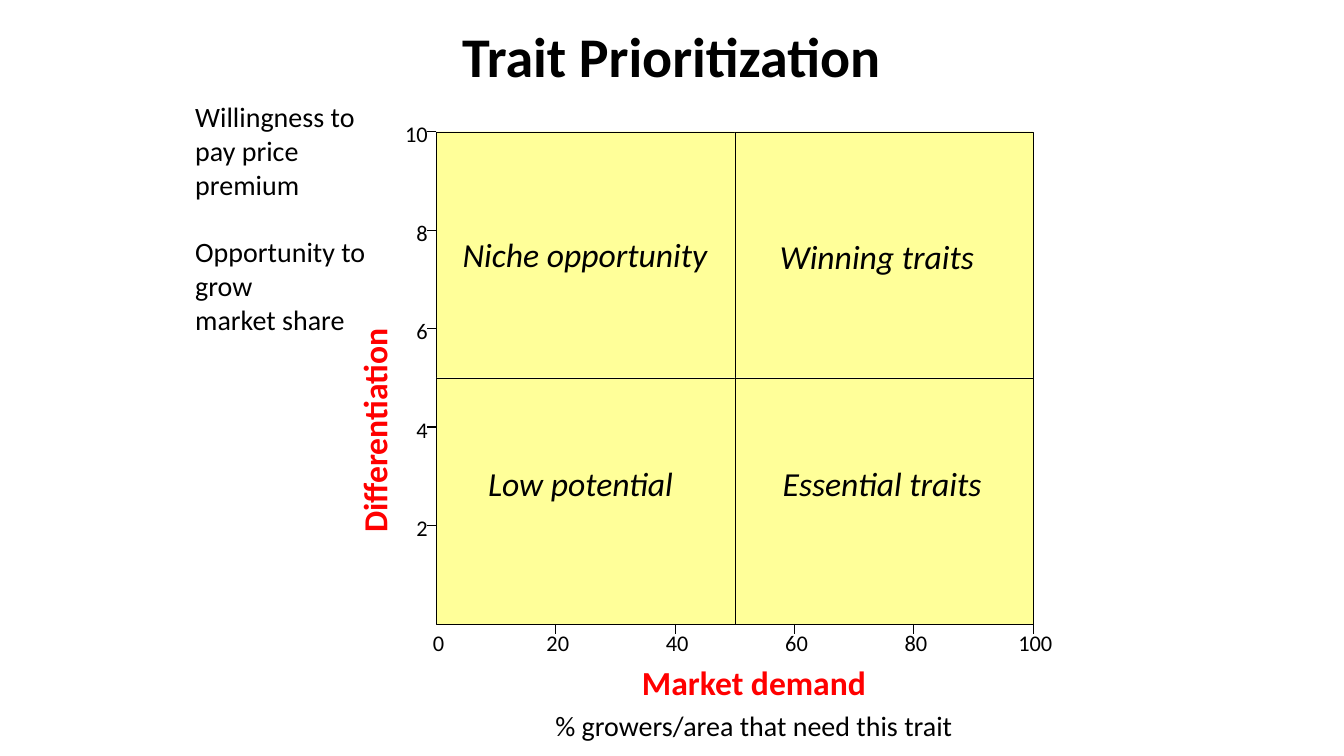
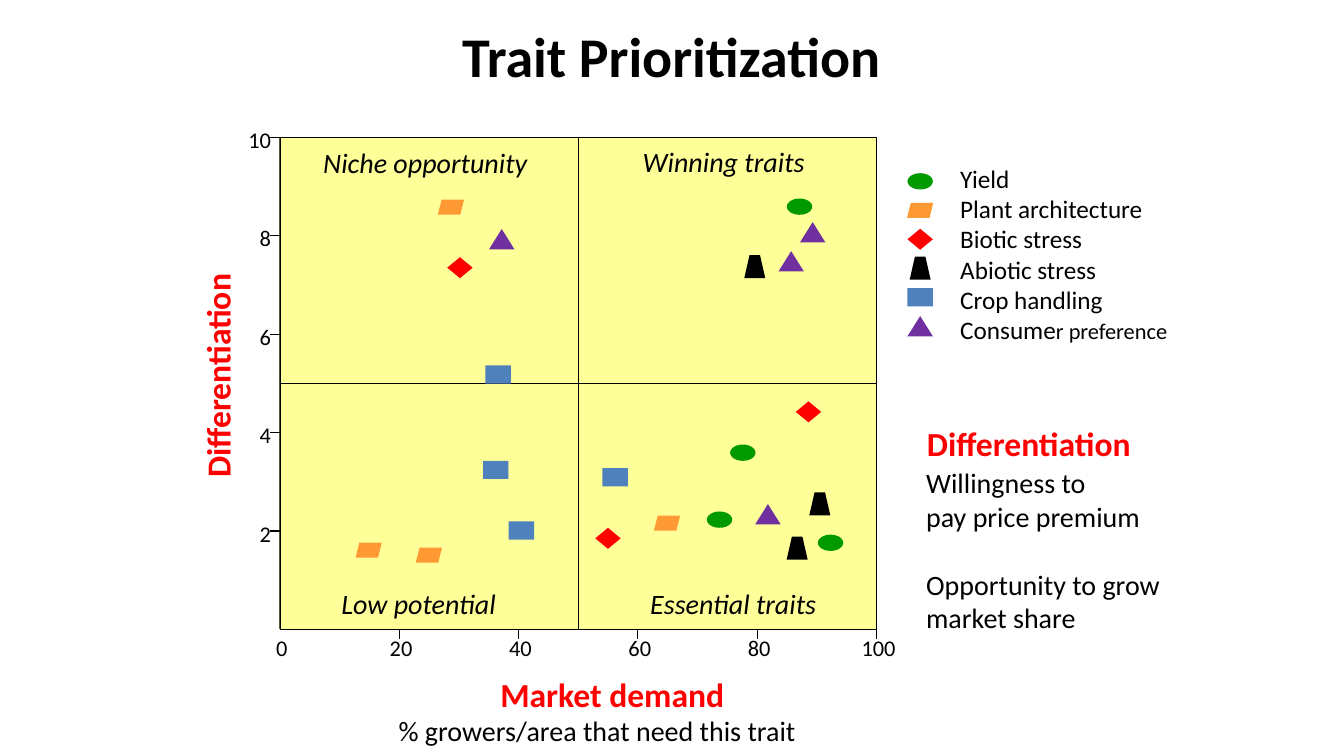
from itertools import product

from lxml import etree
from pptx import Presentation
from pptx.dml.color import RGBColor as RGB
from pptx.enum.shapes import MSO_CONNECTOR as LINK, MSO_SHAPE as SHAPE
from pptx.enum.text import MSO_ANCHOR as ANCHOR, PP_ALIGN as ALIGN
from pptx.oxml.ns import qn
from pptx.util import Cm, Pt

FONT = "Calibri"
HUES = {
    "ink": "000000", "red": "FF0000", "pale": "FFFF99", "green": "009900",
    "orange": "FF9933", "blue": "4F81BD", "violet": "7030A0",
}
WIDE, HIGH = 15.04, 12.4
TICK = 0.25
AREAS = ["Niche opportunity", "Winning traits", "Low potential", "Essential traits"]
TRAITS = [
    ("Yield", SHAPE.FLOWCHART_CONNECTOR, "green", 0.64, 0.41,
     [(87.1, 8.59), (92.3, 1.76), (77.6, 3.59), (73.7, 2.23)]),
    ("Plant architecture", SHAPE.PARALLELOGRAM, "orange", 0.66, 0.38,
     [(28.7, 8.58), (25, 1.51), (64.9, 2.16), (14.9, 1.61)]),
    ("Biotic stress", SHAPE.DIAMOND, "red", 0.64, 0.53,
     [(55, 1.85), (88.6, 4.42), (30.2, 7.35)]),
    ("Abiotic stress", SHAPE.TRAPEZOID, "ink", 0.53, 0.58,
     [(79.6, 7.37), (86.7, 1.65), (90.5, 2.55)]),
    ("Crop handling", SHAPE.RECTANGLE, "blue", 0.64, 0.46,
     [(56.2, 3.09), (36.2, 3.24), (40.5, 2.01), (36.6, 5.18)]),
    ("Consumer preference", SHAPE.ISOSCELES_TRIANGLE, "violet", 0.64, 0.51,
     [(89.3, 8.07), (37.2, 7.93), (81.8, 2.34), (85.7, 7.48)]),
]


def hue(name):
    """Return the named colour."""
    return RGB.from_string(HUES[name])


def style(para, size, tint="ink", bold=False, slant=False, align=ALIGN.LEFT):
    """Set the font and alignment of a paragraph."""
    font = para.font
    font.name, font.size, font.bold, font.italic = FONT, Pt(size), bold, slant
    font.color.rgb = hue(tint)
    para.alignment = align


def text(slide, x, y, w, h, lines, size, **look):
    """Add a text box with one paragraph for each line."""
    box = slide.shapes.add_textbox(Cm(x), Cm(y), Cm(w), Cm(h))
    frame = box.text_frame
    frame.word_wrap = True
    for i, line in enumerate(lines):
        para = frame.add_paragraph() if i else frame.paragraphs[0]
        para.text = line
        style(para, size, **look)
    return box


def label(slide, x, y, words, size, w=8, **look):
    """Add one line of text centred on a point."""
    h = 0.25 + size * 0.043
    return text(slide, x - w / 2, y - h / 2, w, h, [words], size,
                align=ALIGN.CENTER, **look)


def rule(slide, x1, y1, x2, y2):
    """Draw a thin black line."""
    line = slide.shapes.add_connector(LINK.STRAIGHT, Cm(x1), Cm(y1), Cm(x2), Cm(y2))
    line.line.color.rgb = hue("ink")
    line.line.width = Pt(0.75)
    etree.SubElement(line._element.spPr, qn("a:effectLst"))


def block(slide, kind, x, y, w, h, tint, edge=0):
    """Add a filled shape, with a black edge if asked."""
    shape = slide.shapes.add_shape(kind, Cm(x), Cm(y), Cm(w), Cm(h))
    shape.shadow.inherit = False
    shape.fill.solid()
    shape.fill.fore_color.rgb = hue(tint)
    if edge:
        shape.line.color.rgb = hue("ink")
        shape.line.width = Pt(edge)
    else:
        shape.line.fill.background()


def page(deck):
    """Add a slide with the shared title."""
    slide = deck.slides.add_slide(deck.slide_layouts[5])
    title = slide.shapes.title
    title.left, title.top, title.width, title.height = Cm(7.24), Cm(0.69), Cm(19.35), Cm(1.42)
    title.text_frame.text = "Trait Prioritization"
    title.text_frame.vertical_anchor = ANCHOR.MIDDLE
    style(title.text_frame.paragraphs[0], 40, bold=True, align=ALIGN.CENTER)
    return slide


def grid(slide, x, y, size, spots, side, name):
    """Draw the four areas with their axes, scales and names."""
    base = y + HIGH
    rule(slide, x, base, x + WIDE, base)
    rule(slide, x, base, x, y)
    for row, col in product(range(2), repeat=2):
        block(slide, SHAPE.RECTANGLE, x + col * WIDE / 2, y + row * HIGH / 2,
              WIDE / 2, HIGH / 2, "pale", 0.25)
    for i in range(6):
        across, up = x + i * WIDE / 5, base - i * HIGH / 5
        label(slide, across + 0.05, base + 0.47, str(i * 20), 16, w=1.6)
        if i:
            rule(slide, across, base, across, base + TICK)
            rule(slide, x, up, x - TICK, up)
            text(slide, x - 1.47, up - 0.41, 1.5, 0.94, [str(i * 2)], 16,
                 align=ALIGN.RIGHT)
    for words, (across, down) in zip(AREAS, spots):
        label(slide, x + across, y + down, words, size, slant=True)
    axis = label(slide, x - 1.57, y + side, "Differentiation", 24, tint="red", bold=True)
    axis.rotation = 270
    label(slide, x + name[0], y + name[1], "Market demand", 24, tint="red", bold=True)
    label(slide, x + 8, y + 14.96, "% growers/area that need this trait", 20, w=12)


def notes(slide, x, y, w, h):
    """Explain what differentiation means."""
    lines = ["Willingness to\npay price premium", "Opportunity to grow", "market share"]
    box = text(slide, x, y, w, h, lines, 20)
    box.text_frame.paragraphs[1].space_before = Pt(24.4)


def marks(slide, x, y):
    """Place the marker of each trait by demand and differentiation."""
    for _, kind, tint, w, h, points in TRAITS:
        for need, value in points:
            block(slide, kind, x + need / 100 * WIDE - w / 2,
                  y + (1 - value / 10) * HIGH - h / 2, w, h, tint)


def legend(slide, x, y):
    """List the traits beside their markers."""
    box = text(slide, x + 0.76, y - 0.58, 6.6, 5.56, [t[0] for t in TRAITS], 18)
    last = box.text_frame.paragraphs[-1]
    last.runs[0].text = "Consume"
    tail = last.add_run()
    tail.text = "r preference"
    tail.font.size = Pt(16)
    for i, (_, kind, tint, w, h, _) in enumerate(TRAITS):
        block(slide, kind, x - w / 2, y + i * 0.73 - h / 2, w, h, tint)


def main():
    """Build and save the two slides."""
    deck = Presentation()
    deck.slide_width, deck.slide_height = Cm(33.87), Cm(19.05)

    slide = page(deck)
    grid(slide, 11, 3.32, 24, [(3.74, 3.1), (11.1, 3.15), (3.63, 8.85), (11.23, 8.85)],
         7.53, (8, 13.88))
    notes(slide, 4.67, 2.39, 5.23, 6.25)

    slide = page(deck)
    x, y = 7.05, 3.46
    grid(slide, x, y, 20, [(3.67, 0.63), (11.19, 0.6), (3.5, 11.75), (11.43, 11.75)],
         6.01, (8.38, 14.04))
    marks(slide, x, y)
    legend(slide, 23.19, 4.57)
    notes(slide, 23.09, 11.61, 6.9, 4.52)
    text(slide, 23.11, 10.54, 6.5, 1.27, ["Differentiation"], 24, tint="red", bold=True)

    deck.save("out.pptx")


if __name__ == "__main__":
    main()
